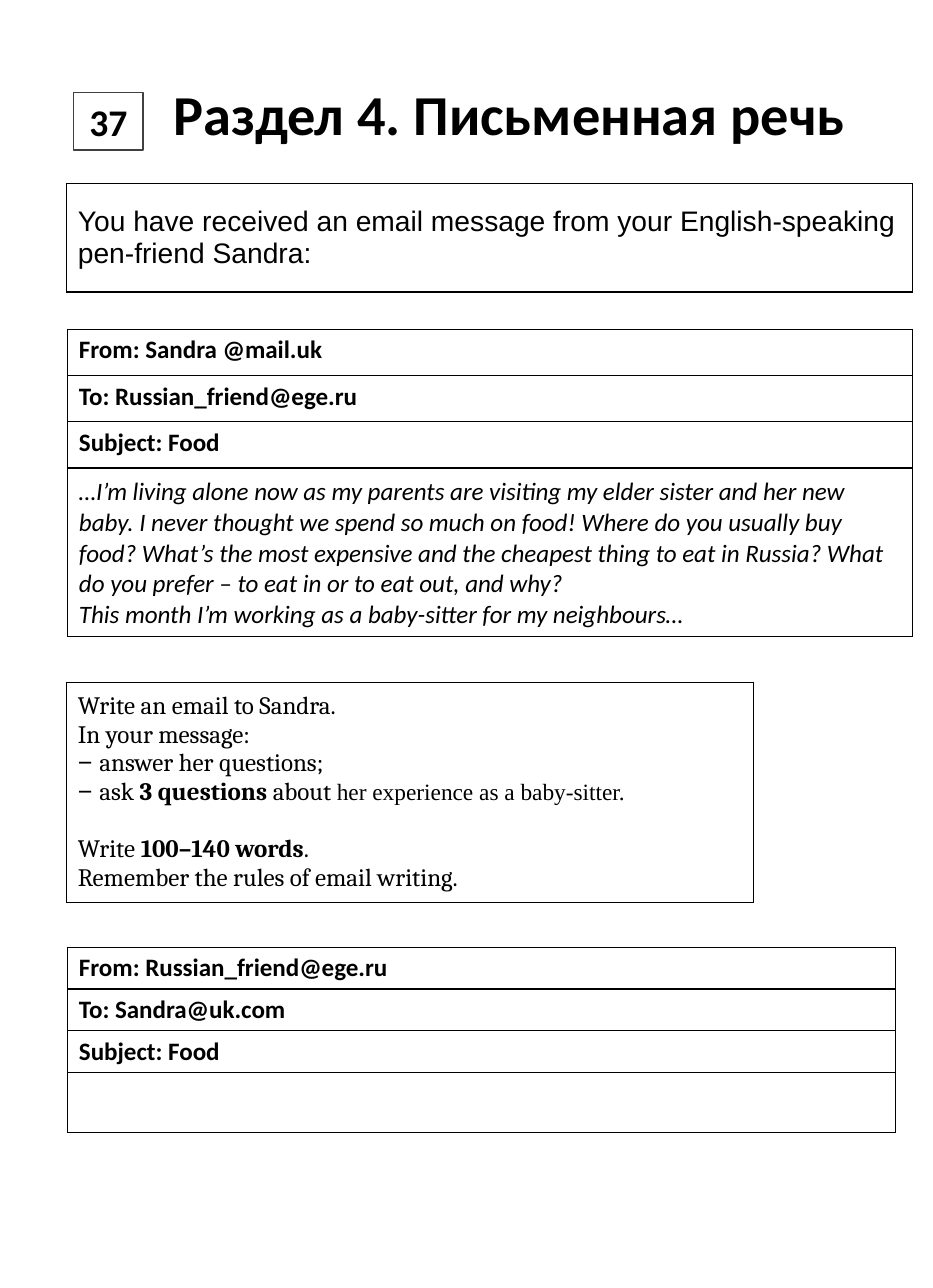
from dataclasses import dataclass

from lxml.etree import SubElement
from pptx import Presentation
from pptx.dml.color import RGBColor
from pptx.enum.shapes import MSO_SHAPE
from pptx.enum.text import MSO_ANCHOR, MSO_AUTO_SIZE, PP_ALIGN
from pptx.oxml.ns import qn
from pptx.shapes.autoshape import Shape
from pptx.slide import Slide
from pptx.table import _Cell
from pptx.text.text import TextFrame, _Paragraph
from pptx.util import Emu, Pt

EMU_PER_PX = 9144
BLACK = "000000"
WHITE = "FFFFFF"
BADGE_GREY = "404040"


@dataclass(frozen=True)
class Span:
    """A stretch of text in one format."""

    text: str
    size: float = 16
    font: str = "Cambria"
    bold: bool = False
    italic: bool = False


@dataclass(frozen=True)
class Line:
    """A paragraph made of spans, with the space above it in points."""

    spans: tuple[Span, ...]
    space_before: int = 0


@dataclass(frozen=True)
class Row:
    """A table row holding one cell."""

    height: int
    lines: tuple[Line, ...] = ()
    anchor: MSO_ANCHOR = MSO_ANCHOR.TOP
    margin: int = 5


@dataclass(frozen=True)
class Panel:
    """A one-column bordered table."""

    left: int
    top: int
    width: int
    rows: tuple[Row, ...]


def px(length: int) -> Emu:
    """Turn px into EMU."""
    return Emu(length * EMU_PER_PX)


def color(value: str) -> RGBColor:
    """Turn a hex string into a colour."""
    return RGBColor.from_string(value)


def line(text: str, **format_options) -> Line:
    """Make a paragraph with a single format."""
    return Line((Span(text, **format_options),))


def add_span(para: _Paragraph, span: Span) -> None:
    """Append a formatted run to a paragraph."""
    run = para.add_run()
    run.text = span.text
    run.font.size = Pt(span.size)
    run.font.name = span.font
    run.font.bold = span.bold
    run.font.italic = span.italic
    run.font.color.rgb = color(BLACK)


def write_lines(frame: TextFrame, lines: tuple[Line, ...], align: PP_ALIGN = PP_ALIGN.LEFT) -> None:
    """Fill a text frame with paragraphs."""
    for index, item in enumerate(lines):
        para = frame.add_paragraph() if index else frame.paragraphs[0]
        para.alignment = align
        para.space_before = Pt(item.space_before)
        for span in item.spans:
            add_span(para, span)


def place(box: Shape, left: int, top: int, width: int, height: int) -> None:
    """Move and size a shape."""
    box.left, box.top, box.width, box.height = map(px, (left, top, width, height))


def add_borders(cell: _Cell) -> None:
    """Draw a thin black line on every side of a cell."""
    properties = cell._tc.get_or_add_tcPr()
    for side in ("a:lnL", "a:lnR", "a:lnT", "a:lnB"):
        border = SubElement(properties, qn(side), w=str(Pt(1)))
        fill = SubElement(border, qn("a:solidFill"))
        SubElement(fill, qn("a:srgbClr"), val=BLACK)


def add_panel(page: Slide, panel: Panel) -> None:
    """Draw a panel as a table."""
    height = sum(row.height for row in panel.rows)
    table = page.shapes.add_table(
        len(panel.rows), 1, px(panel.left), px(panel.top), px(panel.width), px(height)
    ).table
    table.first_row = table.horz_banding = False
    for index, row in enumerate(panel.rows):
        table.rows[index].height = px(row.height)
        cell = table.cell(index, 0)
        add_borders(cell)
        cell.fill.background()
        cell.vertical_anchor = row.anchor
        cell.margin_left = cell.margin_right = px(10)
        cell.margin_top = cell.margin_bottom = px(row.margin)
        write_lines(cell.text_frame, row.lines)


def add_title(page: Slide, text: str) -> None:
    """Place the section heading."""
    title = page.shapes.title
    place(title, 141, 65, 621, 71)
    frame = title.text_frame
    frame.word_wrap = False
    frame.auto_size = MSO_AUTO_SIZE.SHAPE_TO_FIT_TEXT
    frame.vertical_anchor = MSO_ANCHOR.TOP
    write_lines(frame, (line(text, size=36, font="Calibri", bold=True),), PP_ALIGN.CENTER)


def add_badge(page: Slide, text: str) -> None:
    """Draw the framed task number."""
    badge = page.shapes.add_shape(MSO_SHAPE.RECTANGLE, px(65), px(82), px(62), px(51))
    badge.shadow.inherit = False
    badge.fill.solid()
    badge.fill.fore_color.rgb = color(WHITE)
    badge.line.color.rgb = color(BADGE_GREY)
    badge.line.width = Pt(1)
    badge.text_frame.vertical_anchor = MSO_ANCHOR.MIDDLE
    write_lines(badge.text_frame, (line(text, size=24, font="Calibri", bold=True),), PP_ALIGN.CENTER)


def header_rows(height: int, *texts: str) -> tuple[Row, ...]:
    """Make the bold heading rows of an email."""
    return tuple(Row(height, (line(text, font="Calibri", bold=True),)) for text in texts)


DASH = Span("− ", font="Arial")
INTRO = line(
    "You have received an email message from your English-speaking pen-friend Sandra:",
    size=18, font="Arial",
)
LETTER = tuple(line(text, font="Calibri", italic=True) for text in (
    "…I’m living alone now as my parents are visiting my elder sister and her new baby. "
    "I never thought we spend so much on food! Where do you usually buy food? "
    "What’s the most expensive and the cheapest thing to eat in Russia? "
    "What do you prefer – to eat in or to eat out, and why?",
    "This month I’m working as a baby-sitter for my neighbours…",
))
TASK = (
    line("Write an email to Sandra."),
    line("In your message:"),
    Line((DASH, Span("answer her questions;"))),
    Line((
        DASH,
        Span("ask "),
        Span("3 questions ", bold=True),
        Span("about "),
        Span("her experience as a baby-sitter.", size=14.9, font="Times New Roman"),
    )),
    Line((Span("Write "), Span("100–140 words", bold=True), Span(".")), space_before=18),
    line("Remember the rules of email writing."),
)
PANELS = (
    Panel(59, 163, 750, (Row(96, (INTRO,), MSO_ANCHOR.MIDDLE),)),
    Panel(60, 292, 749, (
        *header_rows(41, "From: Sandra @mail.uk", "To: Russian_friend@ege.ru", "Subject: Food"),
        Row(149, LETTER, MSO_ANCHOR.MIDDLE, margin=8),
    )),
    Panel(59, 605, 609, (Row(195, TASK, MSO_ANCHOR.MIDDLE),)),
    Panel(60, 840, 734, (
        *header_rows(37, "From: Russian_friend@ege.ru", "To: Sandra@uk.com", "Subject: Food"),
        Row(53),
    )),
)


def main() -> None:
    """Build the writing task page."""
    deck = Presentation()
    deck.slide_width, deck.slide_height = px(827), px(1142)
    page = deck.slides.add_slide(deck.slide_layouts[5])
    add_title(page, "Раздел 4. Письменная речь")
    add_badge(page, "37")
    for panel in PANELS:
        add_panel(page, panel)
    deck.save("out.pptx")


if __name__ == "__main__":
    main()
